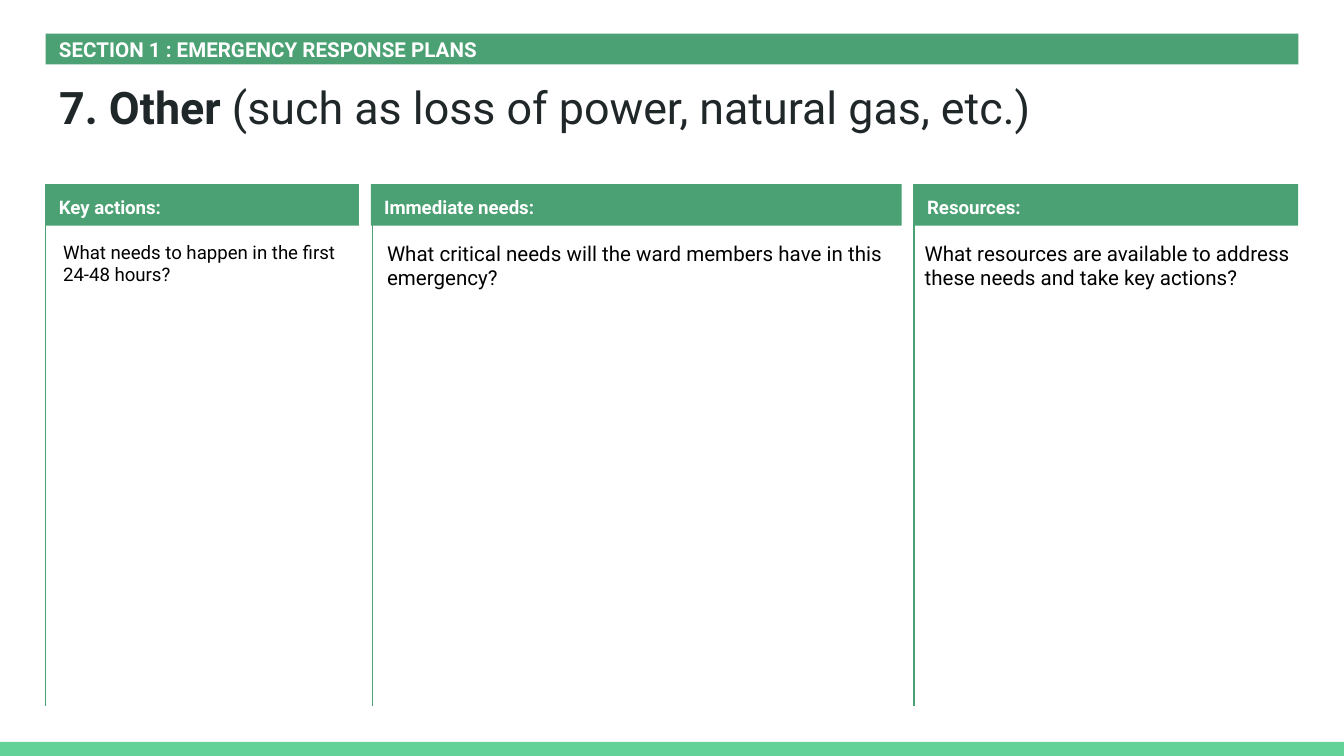
from lxml.etree import SubElement
from pptx import Presentation
from pptx.dml.color import RGBColor
from pptx.enum.shapes import MSO_CONNECTOR, MSO_SHAPE
from pptx.enum.text import MSO_ANCHOR, MSO_AUTO_SIZE, PP_ALIGN
from pptx.oxml.ns import qn
from pptx.util import Inches, Pt

GREEN = RGBColor(0x4B, 0xA1, 0x73)
LIGHT_GREEN = RGBColor(0x63, 0xD2, 0x97)
INK = RGBColor(0x20, 0x27, 0x29)
BLACK = RGBColor(0, 0, 0)
WHITE = RGBColor(0xFF, 0xFF, 0xFF)

FONT = "Roboto"
LEFT, WIDTH = 0.34, 9.32
COLUMN_TOP, COLUMN_BOTTOM = 1.37, 5.25

# Heading, left, width, line position, text left, text size, text
COLUMNS = [
    ("Key actions:", 0.34, 2.33, 0.34, 0.47, 10,
     "What needs to happen in the first 24-48 hours?"),
    ("Immediate needs:", 2.76, 3.95, 2.77, 2.88, 11,
     "What critical needs will the ward members have in this emergency?"),
    ("Resources:", 6.8, 2.86, 6.8, 6.88, 11,
     "What resources are available to address these needs and take key actions?"),
]


class SlideBuilder:
    """Holds the slide and draws each kind of element in one style."""

    def __init__(self, slide):
        self.slide = slide

    def format_frame(self, frame, insets, anchor=MSO_ANCHOR.TOP):
        frame.word_wrap = True
        frame.auto_size = MSO_AUTO_SIZE.NONE
        frame.vertical_anchor = anchor
        (frame.margin_left, frame.margin_top,
         frame.margin_right, frame.margin_bottom) = map(Inches, insets)

    def format_paragraph(self, paragraph, size, color, bold=None):
        paragraph.alignment = PP_ALIGN.LEFT
        font = paragraph.font
        font.name, font.size, font.bold = FONT, Pt(size), bold
        font.color.rgb = color

    def title(self, bold_text, plain_text, left, top, width, height):
        title = self.slide.shapes.title
        title.left, title.top = Inches(left), Inches(top)
        title.width, title.height = Inches(width), Inches(height)
        self.format_frame(title.text_frame, [0.1] * 4)
        paragraph = title.text_frame.paragraphs[0]
        self.format_paragraph(paragraph, 24, INK)
        for text, bold in ((bold_text, True), (plain_text, False)):
            run = paragraph.add_run()
            run.text, run.font.bold = text, bold

    def bar(self, left, top, width, height, color=GREEN):
        shape = self.slide.shapes.add_shape(
            MSO_SHAPE.RECTANGLE, Inches(left), Inches(top), Inches(width), Inches(height))
        shape.shadow.inherit = False
        shape.fill.solid()
        shape.fill.fore_color.rgb = color
        shape.line.fill.background()
        return shape

    def label_bar(self, text, left, top, width, height, size, insets, spacing=1.0):
        frame = self.bar(left, top, width, height).text_frame
        self.format_frame(frame, insets, MSO_ANCHOR.MIDDLE)
        frame.text = text
        paragraph = frame.paragraphs[0]
        paragraph.line_spacing = spacing
        self.format_paragraph(paragraph, size, WHITE, bold=True)

    def text(self, text, left, top, width, height, size):
        frame = self.slide.shapes.add_textbox(
            Inches(left), Inches(top), Inches(width), Inches(height)).text_frame
        self.format_frame(frame, [0] * 4)
        frame.text = text
        self.format_paragraph(frame.paragraphs[0], size, BLACK)

    def vertical_line(self, x, top, bottom):
        line = self.slide.shapes.add_connector(
            MSO_CONNECTOR.STRAIGHT, Inches(x), Inches(top), Inches(x), Inches(bottom))
        line.line.color.rgb = GREEN
        line.line.width = Pt(0.75)
        SubElement(line._element.spPr, qn("a:effectLst"))


def main():
    presentation = Presentation()
    presentation.slide_width = Inches(10)
    presentation.slide_height = Inches(10 * 9 / 16)
    title_only = presentation.slide_layouts[5]
    builder = SlideBuilder(presentation.slides.add_slide(title_only))

    # Footer strip, section banner and title
    builder.bar(0, 5.52, 10, 0.11, LIGHT_GREEN)
    builder.label_bar("SECTION 1 : EMERGENCY RESPONSE PLANS",
                      LEFT, 0.25, WIDTH, 0.23, 11, [0.1, 0, 0, 0])
    builder.title("7. Other ", "(such as loss of power, natural gas, etc.)",
                  LEFT, 0.49, WIDTH, 0.63)

    # Three planning columns
    for heading, left, width, line_x, text_left, size, text in COLUMNS:
        builder.label_bar(heading, left, COLUMN_TOP, width, 0.31, 10, [0.1] * 4, 1.15)
        builder.vertical_line(line_x, COLUMN_TOP, COLUMN_BOTTOM)
        builder.text(text, text_left, 1.79, left + width - text_left, 3.6, size)

    presentation.save("out.pptx")


if __name__ == "__main__":
    main()
